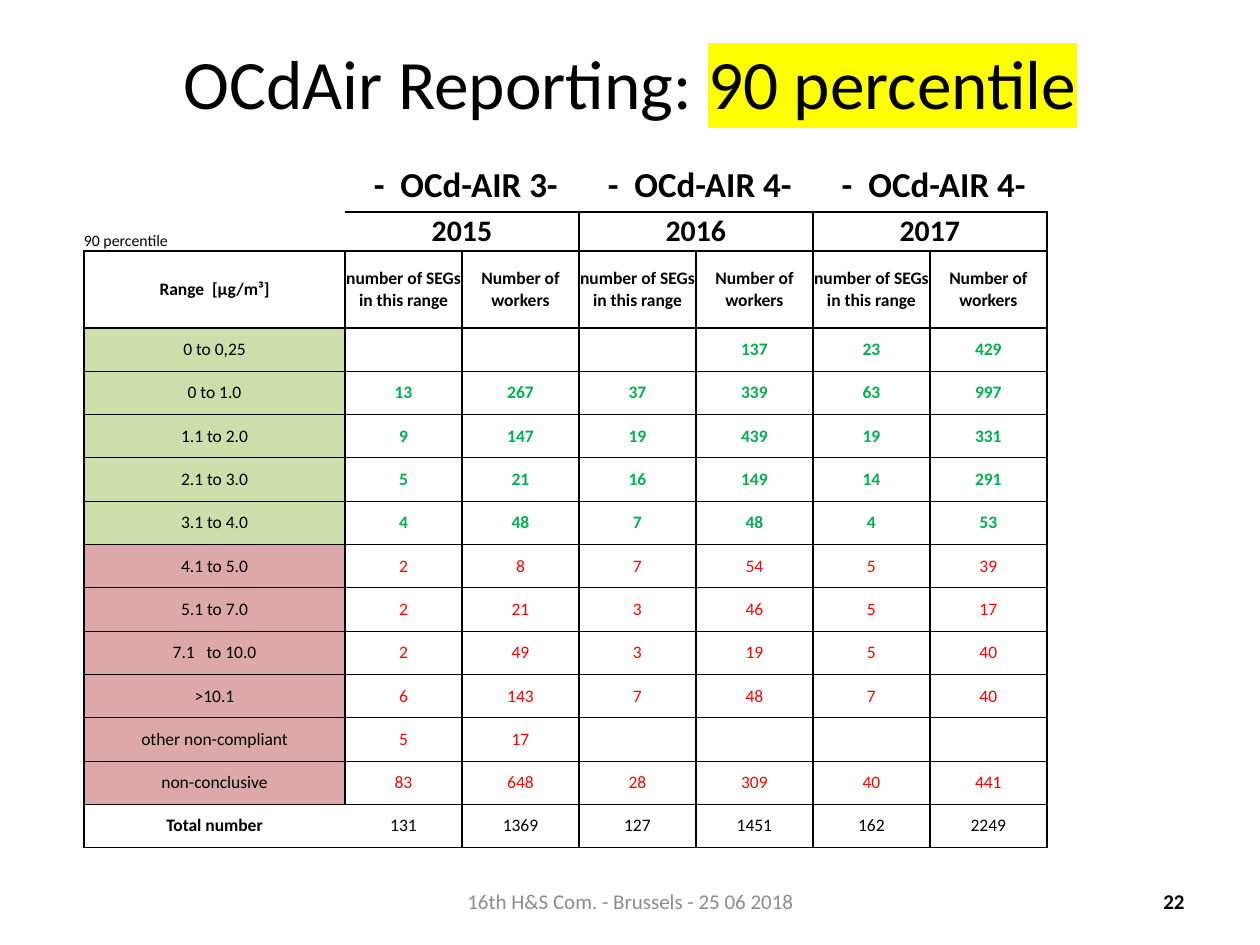
from lxml import etree
from pptx import Presentation
from pptx.dml.color import RGBColor
from pptx.enum.text import MSO_ANCHOR, MSO_AUTO_SIZE, PP_ALIGN
from pptx.oxml.ns import qn
from pptx.util import Pt

EMU_PER_PX = 914400 / 126
LEFT, CENTER, RIGHT = PP_ALIGN.LEFT, PP_ALIGN.CENTER, PP_ALIGN.RIGHT
MIDDLE, BOTTOM = MSO_ANCHOR.MIDDLE, MSO_ANCHOR.BOTTOM
NO_AUTOFIT = MSO_AUTO_SIZE.NONE

BLACK, GRAY, YELLOW = "000000", "8C8C8C", "FFFF00"
GREEN, RED = "00B050", "FF0000"
LIGHT_GREEN, LIGHT_RED = "CEDEAA", "DCA9A8"

CAMPAIGNS = [(" -  OCd-AIR 3-", "2015"), (" -  OCd-AIR 4-", "2016"), (" -  OCd-AIR 4-", "2017")]
COMPLIANT = [
    ("0 to 0,25", "", "", "", "137", "23", "429"),
    ("0 to 1.0", "13", "267", "37", "339", "63", "997"),
    ("1.1 to 2.0", "9", "147", "19", "439", "19", "331"),
    ("2.1 to 3.0", "5", "21", "16", "149", "14", "291"),
    ("3.1 to 4.0", "4", "48", "7", "48", "4", "53"),
]
NON_COMPLIANT = [
    ("4.1 to 5.0", "2", "8", "7", "54", "5", "39"),
    ("5.1 to 7.0", "2", "21", "3", "46", "5", "17"),
    ("7.1   to 10.0", "2", "49", "3", "19", "5", "40"),
    (">10.1", "6", "143", "7", "48", "7", "40"),
    ("other non-compliant", "5", "17", "", "", "", ""),
    ("non-conclusive", "83", "648", "28", "309", "40", "441"),
]
TOTALS = ("Total number", "131", "1369", "127", "1451", "162", "2249")
HEADER_HEIGHTS = [52, 39, 77]
RANGE_WIDTH, COUNT_WIDTH = 261, 117
ROW_COUNT = len(HEADER_HEIGHTS) + len(COMPLIANT) + len(NON_COMPLIANT) + 1
LAST_ROW = ROW_COUNT - 1


def px(length):
    """Turn pixels into EMU."""
    return round(length * EMU_PER_PX)


def color(hex_string):
    """Turn a hex string into a colour."""
    return RGBColor.from_string(hex_string)


def write_text(frame, text, size=10, bold=False, fill=BLACK, align=CENTER, highlight=None):
    """Add a formatted run to the first paragraph of a text frame."""
    paragraph = frame.paragraphs[0]
    paragraph.alignment = align
    run = paragraph.add_run()
    run.text = text
    run.font.size = Pt(size)
    run.font.bold = bold
    run.font.name = "Calibri"
    run.font.color.rgb = color(fill)
    if highlight:
        element = etree.Element(qn("a:highlight"))
        etree.SubElement(element, qn("a:srgbClr"), val=highlight)
        run.font._element.find(qn("a:solidFill")).addnext(element)


def set_borders(cell, widths):
    """Draw the cell sides that have a width and hide the others."""
    properties = cell._tc.get_or_add_tcPr()
    for side in "LRTB":
        line = etree.SubElement(properties, qn(f"a:ln{side}"))
        if side in widths:
            line.set("w", str(Pt(widths[side])))
            fill = etree.SubElement(line, qn("a:solidFill"))
            etree.SubElement(fill, qn("a:srgbClr"), val=BLACK)
        else:
            etree.SubElement(line, qn("a:noFill"))


def border_widths(row, column):
    """Return the border widths that belong to a table position."""
    sides = "LRTB"
    if row == 0:
        sides = "B" if column else ""
    elif row == 1 and column < 2:
        sides = "RTB" if column else "B"
    elif row == LAST_ROW and column < 2:
        sides = "RTB" if column else "LTB"
    widths = dict.fromkeys(sides, 1)
    if 5 <= row < LAST_ROW:
        widths["T"] = 0.5
    if 4 <= row < LAST_ROW - 1:
        widths["B"] = 0.5
    return widths


def format_cell(cell, row, column, fill=None):
    """Set margins, anchor, borders and fill of a cell."""
    cell.margin_left = cell.margin_right = cell.margin_top = cell.margin_bottom = 0
    cell.vertical_anchor = BOTTOM if (row, column) == (1, 0) else MIDDLE
    set_borders(cell, border_widths(row, column))
    if fill:
        cell.fill.solid()
        cell.fill.fore_color.rgb = color(fill)
    else:
        cell.fill.background()


def fill_headers(table):
    """Write the campaign, year and column headings."""
    write_text(table.cell(1, 0).text_frame, "90 percentile", size=9, align=LEFT)
    write_text(table.cell(2, 0).text_frame, "Range  [µg/m³]", bold=True)
    for index, (campaign, year) in enumerate(CAMPAIGNS):
        column = 1 + 2 * index
        for row, text, size in ((0, campaign, 20), (1, year, 17)):
            table.cell(row, column).merge(table.cell(row, column + 1))
            write_text(table.cell(row, column).text_frame, text, size=size, bold=True)
        for offset, text in enumerate(("number of SEGs in this range", "Number of workers")):
            write_text(table.cell(2, column + offset).text_frame, text, bold=True)


def add_results_table(slide, left, top, width, height):
    """Add the table of ranges by campaign."""
    frame = slide.shapes.add_table(ROW_COUNT, 7, px(left), px(top), px(width), px(height))
    table = frame.table
    table.first_row = table.horz_banding = False
    for index, column in enumerate(table.columns):
        column.width = px(COUNT_WIDTH if index else RANGE_WIDTH)
    body_rows = ROW_COUNT - len(HEADER_HEIGHTS)
    body_height = (height - sum(HEADER_HEIGHTS)) / body_rows
    for row, row_height in zip(table.rows, HEADER_HEIGHTS + [body_height] * body_rows):
        row.height = px(row_height)

    fill_headers(table)
    groups = [
        (COMPLIANT, LIGHT_GREEN, GREEN, False, True),
        (NON_COMPLIANT, LIGHT_RED, RED, False, False),
        ([TOTALS], None, BLACK, True, False),
    ]
    body = [(values, *style) for rows, *style in groups for values in rows]
    label_fills = [None] * len(HEADER_HEIGHTS) + [entry[1] for entry in body]
    for row, label_fill in enumerate(label_fills):
        for column in range(7):
            cell = table.cell(row, column)
            format_cell(cell, row, column, None if column else label_fill)
    for row, (values, _, ink, label_bold, count_bold) in enumerate(body, len(HEADER_HEIGHTS)):
        for column, text in enumerate(values):
            if text:
                write_text(table.cell(row, column).text_frame, text,
                           bold=count_bold if column else label_bold,
                           fill=ink if column else BLACK)


def add_title(slide, left, top, width, height):
    """Place the title with its highlighted end."""
    title = slide.shapes.title
    title.left, title.top, title.width, title.height = map(px, (left, top, width, height))
    frame = title.text_frame
    frame.auto_size = NO_AUTOFIT
    frame.vertical_anchor = MIDDLE
    write_text(frame, "OCdAir Reporting: ", size=39.6)
    write_text(frame, "90 percentile", size=39.6, highlight=YELLOW)


def add_label(slide, left, top, width, height, text, **style):
    """Add a vertically centred text box."""
    frame = slide.shapes.add_textbox(*map(px, (left, top, width, height))).text_frame
    frame.word_wrap = True
    frame.vertical_anchor = MIDDLE
    write_text(frame, text, size=12, **style)


def add_footer(slide, left, top, width, height):
    """Add the centred event line and the slide number at the right."""
    add_label(slide, left + 368, top, 399, height,
              "16th H&S Com. - Brussels - 25 06 2018", fill=GRAY)
    add_label(slide, left + width - 294, top, 294, height, "22", bold=True, align=RIGHT)


def main():
    """Build and save the slide."""
    presentation = Presentation()
    presentation.slide_width, presentation.slide_height = px(1260), px(945)
    slide = presentation.slides.add_slide(presentation.slide_layouts[5])
    add_title(slide, 63, 38, 1134, 87)
    add_footer(slide, 63, 876, 1134, 50)
    add_results_table(slide, 84, 160, 963, 688)
    presentation.save("out.pptx")


if __name__ == "__main__":
    main()
